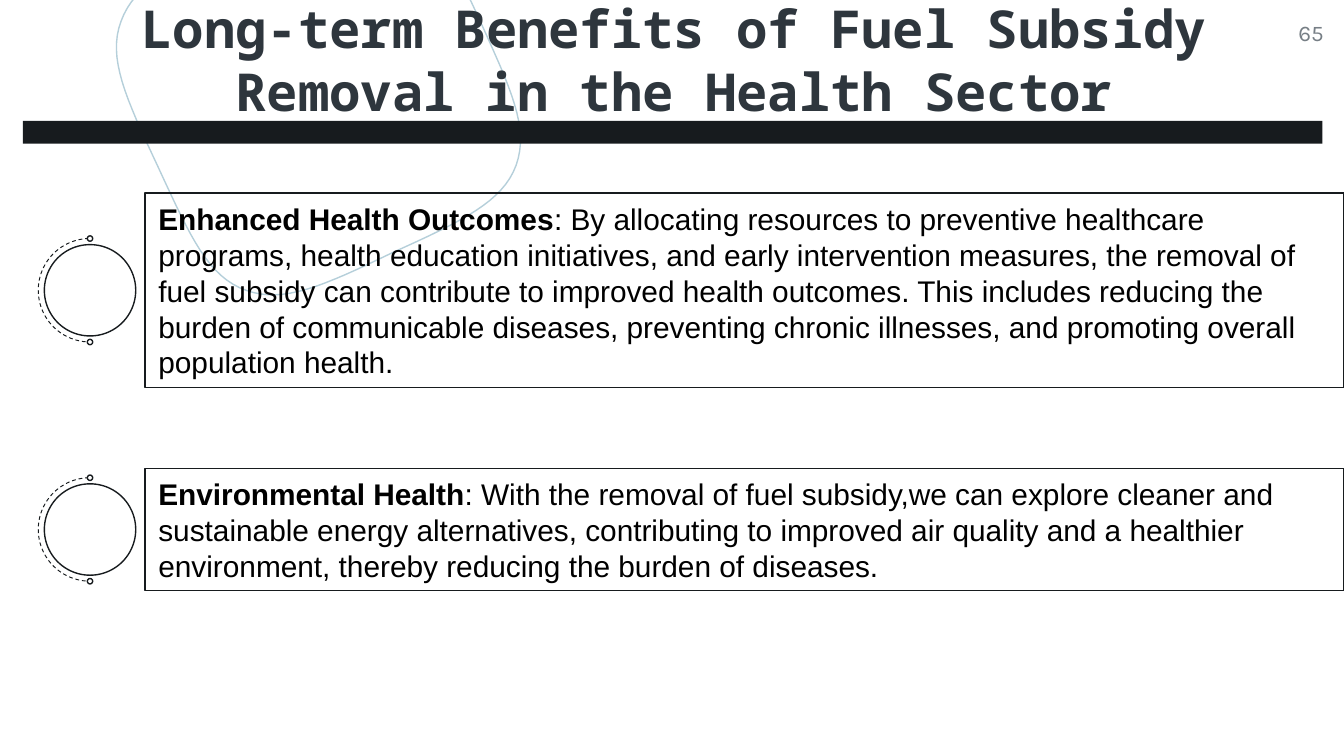
from pptx import Presentation
from pptx.dml.color import RGBColor
from pptx.enum import dml, shapes, text
from pptx.util import Inches, Pt

COLORS = {"ink": "171B1E", "title": "2E363D", "number": "767E85",
          "blob": "B5CFDA", "white": "FFFFFF", "black": "000000"}


def add_shape(kind, x, y, w, h, fill=None, line="ink", width=0.75):
    sp = s.shapes.add_shape(kind, Inches(x), Inches(y), Inches(w), Inches(h))
    sp.shadow.inherit = False
    if fill:
        sp.fill.solid()
        sp.fill.fore_color.rgb = RGBColor.from_string(COLORS[fill])
    else:
        sp.fill.background()
    if line:
        sp.line.color.rgb = RGBColor.from_string(COLORS[line])
        sp.line.width = Pt(width)
    else:
        sp.line.fill.background()
    return sp


def style_run(r, font, size, color, bold=False):
    r.font.name = font
    r.font.size = Pt(size)
    r.font.bold = bold
    r.font.color.rgb = RGBColor.from_string(COLORS[color])


prs = Presentation()
prs.slide_width = Inches(10)
prs.slide_height = prs.slide_width * 9 // 16
s = prs.slides.add_slide(prs.slide_layouts[5])

# Background blob: Bezier segments sampled into short straight steps
start = (2.92, 1.88)
curves = [
    ((3.45, 1.64), (3.74, 1.5), (3.84, 1.23)),
    ((3.94, 0.95), (3.8, 0.66), (3.56, 0.13)),
    ((3.32, -0.39), (3.18, -0.68), (2.9, -0.78)),
    ((2.63, -0.88), (2.33, -0.74), (1.81, -0.5)),
    ((1.29, -0.26), (1, -0.12), (0.9, 0.16)),
    ((0.8, 0.43), (0.93, 0.72), (1.18, 1.25)),
    ((1.42, 1.77), (1.55, 2.06), (1.83, 2.16)),
    ((2.11, 2.26), (2.4, 2.13), (2.92, 1.88)),
]
STEPS = 16
points = []
p0 = start
for p1, p2, p3 in curves:
    for i in range(1, STEPS + 1):
        t = i / STEPS
        points.append(tuple(
            Inches((1 - t) ** 3 * a + 3 * (1 - t) ** 2 * t * b + 3 * (1 - t) * t ** 2 * c + t ** 3 * d)
            for a, b, c, d in zip(p0, p1, p2, p3)))
    p0 = p3
builder = s.shapes.build_freeform(*points[-1])
builder.add_line_segments(points, close=True)
blob = builder.convert_to_shape()
blob.shadow.inherit = False
blob.fill.background()
blob.line.color.rgb = RGBColor.from_string(COLORS["blob"])
blob.line.width = Pt(0.75)

# Title, placed in front of the blob
title = s.shapes.title
title._element.addprevious(blob._element)
number = s.shapes.add_textbox(Inches(9.25), Inches(0.14), Inches(0.6), Inches(0.43))
title.left, title.top = Inches(0.18), Inches(-0.03)
title.width, title.height = Inches(9.67), Inches(0.7)
for sp, words, align, style in [
    (title, "Long-term Benefits of Fuel Subsidy Removal in the Health Sector",
     text.PP_ALIGN.CENTER, ("Noto Sans Mono", 28, "title", True)),
    (number, "65", text.PP_ALIGN.RIGHT, ("Karla", 12, "number")),
]:
    tf = sp.text_frame
    tf.text = words
    tf.word_wrap = True
    tf.auto_size = text.MSO_AUTO_SIZE.NONE
    tf.vertical_anchor = text.MSO_ANCHOR.TOP
    tf.margin_left = tf.margin_right = tf.margin_top = tf.margin_bottom = 0
    p = tf.paragraphs[0]
    p.alignment = align
    style_run(p.runs[0], *style)

# Bar under the title
RECT, OVAL = shapes.MSO_SHAPE.RECTANGLE, shapes.MSO_SHAPE.OVAL
add_shape(RECT, 0.17, 0.9, 9.67, 0.17, "ink", None)
add_shape(RECT, 0.32, 0.94, 9.36, 0.11, "ink")

# Benefits: circle marker and text box share one vertical centre
CX, DISC, RING, DOT = 0.67, 0.68, 0.77, 0.04
benefits = [
    (2.16, 1.45, "Enhanced Health Outcomes",
     ": By allocating resources to preventive healthcare programs, health education "
     "initiatives, and early intervention measures, the removal of fuel subsidy can "
     "contribute to improved health outcomes. This includes reducing the burden of "
     "communicable diseases, preventing chronic illnesses, and promoting overall "
     "population health."),
    (3.94, 0.91, "Environmental Health",
     ": With the removal of fuel subsidy,we can explore cleaner and sustainable energy "
     "alternatives, contributing to improved air quality and a healthier environment, "
     "thereby reducing the burden of diseases."),
]
for cy, height, heading, body in reversed(benefits):
    add_shape(OVAL, CX - DISC / 2, cy - DISC / 2, DISC, DISC, "white")
    arc = add_shape(shapes.MSO_SHAPE.ARC, CX - RING / 2, cy - RING / 2, RING, RING, width=0.5)
    arc.adjustments[0], arc.adjustments[1] = 52.44, 162.61
    arc.line.dash_style = dml.MSO_LINE.DASH
    for y in (cy - RING / 2, cy + RING / 2):
        add_shape(OVAL, CX - DOT / 2, y - DOT / 2, DOT, DOT, "white")
    box = add_shape(RECT, 1.08, cy - height / 2, 8.92, height)
    tf = box.text_frame
    tf.word_wrap = True
    tf.auto_size = text.MSO_AUTO_SIZE.SHAPE_TO_FIT_TEXT
    tf.vertical_anchor = text.MSO_ANCHOR.MIDDLE
    p = tf.paragraphs[0]
    p.alignment = text.PP_ALIGN.LEFT
    for words, bold in ((heading, True), (body, False)):
        r = p.add_run()
        r.text = words
        style_run(r, "Arial", 16, "black", bold)

prs.save("out.pptx")
